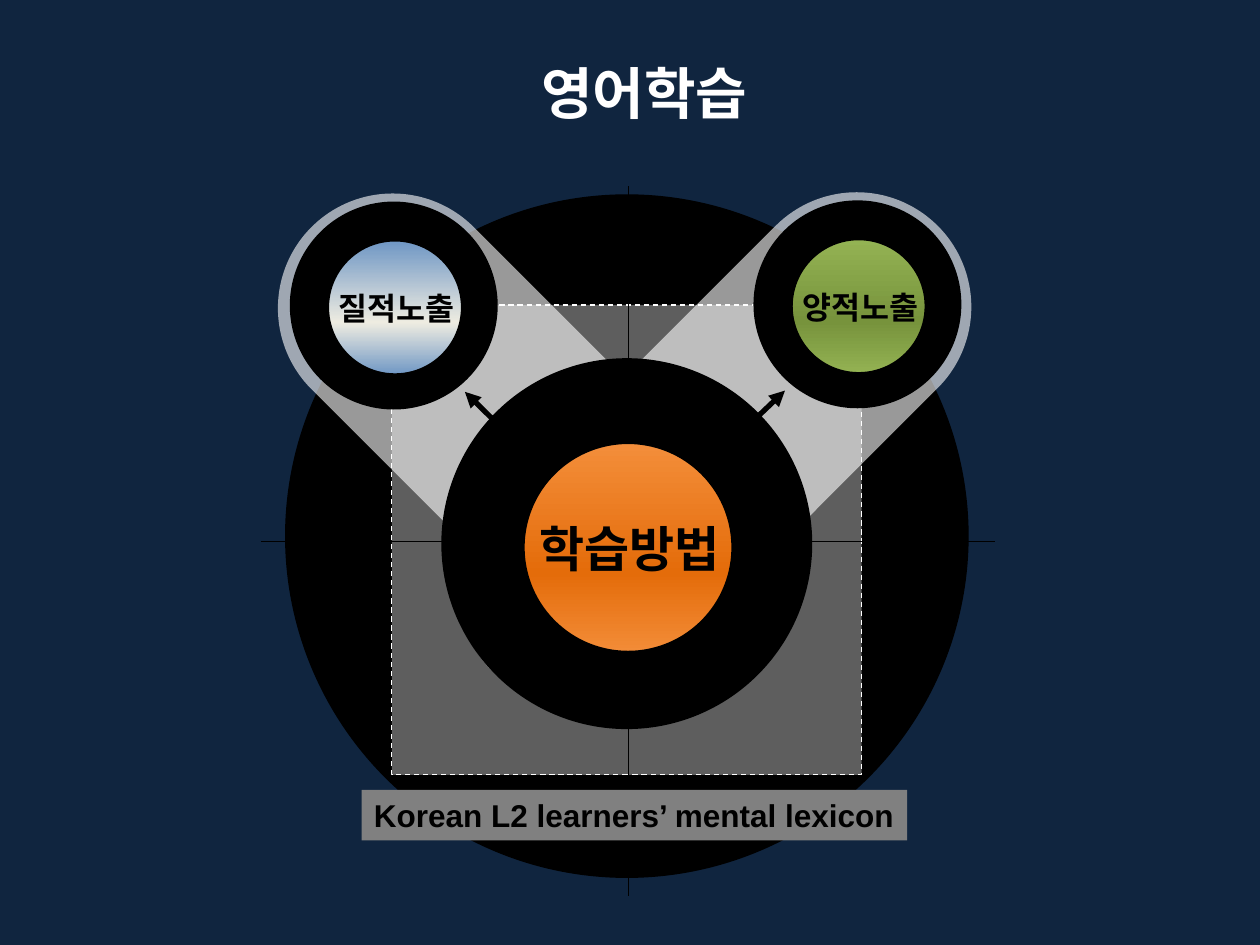
import pptx
import pptx.util
import pptx.dml.color
import pptx.enum.dml
import pptx.enum.shapes
import pptx.enum.text
import pptx.oxml
import pptx.oxml.ns
from lxml import etree

SHAPE = pptx.enum.shapes.MSO_SHAPE
ALIGN = pptx.enum.text.PP_ALIGN
ANCHOR = pptx.enum.text.MSO_ANCHOR
AUTO = pptx.enum.text.MSO_AUTO_SIZE

THEME = {
    "backdrop": "10253F", "ink": "000000", "light": "FFFFFF", "caption": "808080",
    "blue": ("4F81BD", "EEECE1"), "green": ("9BBB59", "77933C"), "orange": ("F79646", "E46C0A"),
    "latin": "Arial", "korean": "Noto Sans CJK KR",
    "title_size": 32, "hub_size": 28, "label_size": 18,
}

# Content; lengths are cells of a grid with 100 columns and 75 rows
COLUMNS, ROWS = 100, 75
CELL = pptx.util.Inches(10) // COLUMNS
TITLE = "영어학습"
CAPTION = "Korean L2 learners’ mental lexicon"
BEAMS = [((42.4, 35.7), 45), ((56.75, 35.6), 315)]
AXES = [((20.7, 43), (79, 43)), ((49.9, 14.8), (49.9, 71.1))]
ARROWS = [((39, 53.2), (62.3, 31)), ((36.9, 31.1), (59.4, 53.2))]
EXPOSURES = [("질적노출", (31.25, 24.25), "blue"), ("양적노출", (68.05, 24.15), "green")]
METHOD = ("학습방법", (49.75, 43.3), "orange")


def cells(count):
    return round(count * CELL)


def rgb(name):
    return pptx.dml.color.RGBColor.from_string(THEME[name])


def sub(parent, tag, **attributes):
    return etree.SubElement(parent, pptx.oxml.ns.qn(tag), **attributes)


def box(center, width, height):
    return [cells(n) for n in (center[0] - width / 2, center[1] - height / 2, width, height)]


def add_form(shapes, kind, center, width, height, fill="ink", line=None, alpha=None):
    form = shapes.add_shape(kind, *box(center, width, height))
    form.shadow.inherit = False
    form.fill.solid()
    form.fill.fore_color.rgb = rgb(fill)
    if alpha:
        color = form.fill._xPr.find(".//" + pptx.oxml.ns.qn("a:srgbClr"))
        sub(color, "a:alpha", val=str(alpha * 1000))
    if line:
        form.line.color.rgb = rgb("ink")
        form.line.width = pptx.util.Pt(line)
    else:
        form.line.fill.background()
    return form


def shade(form, colors):
    """Vertical gradient: edge colour, middle colour at 61 %, edge colour."""
    edge, middle = THEME[colors]
    form.fill.gradient()
    gradient = form.fill._xPr.find(pptx.oxml.ns.qn("a:gradFill"))
    for child in list(gradient):
        gradient.remove(child)
    stops = sub(gradient, "a:gsLst")
    for position, color in ((0, edge), (61, middle), (100, edge)):
        sub(sub(stops, "a:gs", pos=str(position * 1000)), "a:srgbClr", val=color)
    sub(gradient, "a:lin", ang="5400000", scaled="0")


def write(form, text, size, font, color="ink", align=ALIGN.CENTER, auto=AUTO.SHAPE_TO_FIT_TEXT):
    frame = form.text_frame
    frame.text = text
    frame.word_wrap = True
    frame.auto_size = auto
    frame.vertical_anchor = ANCHOR.TOP
    paragraph = frame.paragraphs[0]
    paragraph.alignment = align
    run = paragraph.runs[0]
    run.font.size = pptx.util.Pt(THEME[size])
    run.font.bold = True
    run.font.name = THEME[font]
    run.font.color.rgb = rgb(color)
    if font == "korean":
        sub(run.font._element, "a:ea", typeface=THEME[font])
    return frame


def add_line(shapes, start, end, width, arrows=False):
    line = shapes.add_connector(pptx.enum.shapes.MSO_CONNECTOR.STRAIGHT,
                                *[cells(n) for n in (*start, *end)])
    line.line.color.rgb = rgb("ink")
    line.line.width = pptx.util.Pt(width)
    if arrows:
        for tag in ("a:headEnd", "a:tailEnd"):
            sub(line.line._get_or_add_ln(), tag, type="triangle")
    sub(line._element.spPr, "a:effectLst")


def add_medallion(shapes, item, core, ring, label_box, size, font, line):
    """Shaded core, black ring and label around one centre."""
    text, (x, y), colors = item
    shade(add_form(shapes, SHAPE.OVAL, (x - 0.1, y - 0.1), core, core, line=line), colors)
    donut = add_form(shapes, SHAPE.DONUT, (x + 0.1, y + 0.15), ring, ring, line=1)
    donut.adjustments[0] = 0.124
    label = shapes.add_textbox(*box((x + 0.25, y + 0.2), *label_box))
    write(label, text, size, font)


def main():
    deck = pptx.Presentation()
    deck.slide_width, deck.slide_height = cells(COLUMNS), cells(ROWS)
    slide = deck.slides.add_slide(deck.slide_layouts[6])
    slide.background.fill.solid()
    slide.background.fill.fore_color.rgb = rgb("backdrop")
    shapes = slide.shapes

    # Outer disc, dashed square and beams
    add_form(shapes, SHAPE.OVAL, (49.75, 42.55), 52.9, 52.9, line=9.75)
    square = add_form(shapes, SHAPE.RECTANGLE, (49.75, 42.85), 37.3, 37.3, "light", 0.75, 37)
    square.line.color.rgb = rgb("light")
    square.line.dash_style = pptx.enum.dml.MSO_LINE.DASH
    for center, angle in BEAMS:
        beam = add_form(shapes, SHAPE.ROUNDED_RECTANGLE, center, 50, 18.2, "light", alpha=60)
        beam.adjustments[0] = 0.5
        beam.rotation = angle

    # Title
    title = shapes.add_textbox(*box((50.15, 7.3), 99.7, 10.4))
    frame = write(title, TITLE, "title_size", "korean", "light", auto=AUTO.NONE)
    frame.vertical_anchor = ANCHOR.MIDDLE
    frame.margin_left = cells(3)

    # Hub disc, arrows and axes
    add_form(shapes, SHAPE.OVAL, (49.75, 43.15), 29.3, 29.3, line=1)
    for start, end in ARROWS:
        add_line(shapes, start, end, 3, arrows=True)
    for start, end in AXES:
        add_line(shapes, start, end, 0.75)

    # Exposure circles
    for exposure in EXPOSURES:
        group = shapes.add_group_shape().shapes
        add_form(group, SHAPE.OVAL, exposure[1], 16.5, 16.5)
        add_medallion(group, exposure, 13.3, 14.1, (18, 4), "label_size", "latin", None)

    # Learning method in the centre
    add_medallion(shapes, METHOD, 20.8, 22, (28.1, 5.7), "hub_size", "korean", 2)

    # Caption
    caption = add_form(shapes, SHAPE.RECTANGLE, (50.35, 64.7), 43.3, 4, "caption")
    write(caption, CAPTION, "label_size", "latin", align=ALIGN.LEFT)

    deck.save("out.pptx")


if __name__ == "__main__":
    main()
